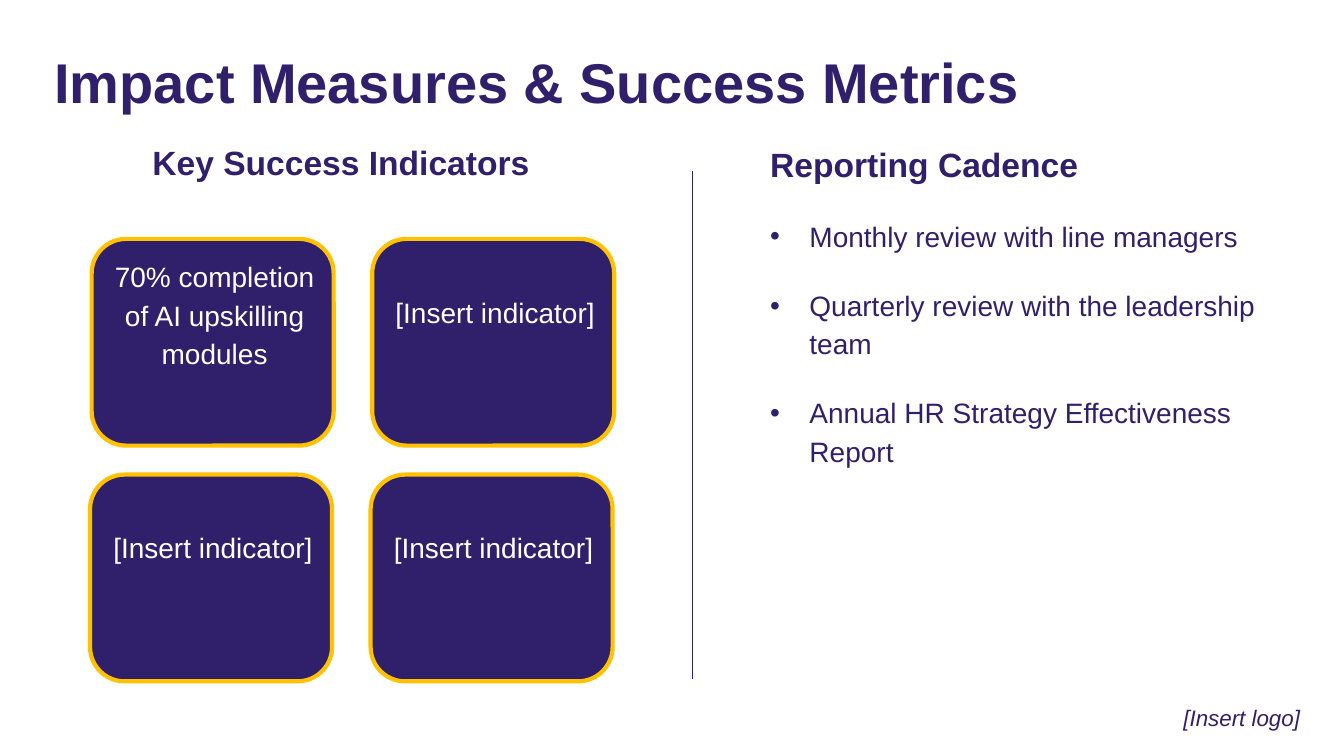
"""Build the impact measures and success metrics slide."""
from pptx import Presentation
from pptx.dml.color import RGBColor
from pptx.enum.shapes import MSO_CONNECTOR as CONN, MSO_SHAPE as SHAPE
from pptx.enum.text import MSO_ANCHOR as ANCHOR, PP_ALIGN as ALIGN
from pptx.oxml.ns import qn
from pptx.util import Cm, Pt
from lxml.etree import SubElement

TITLE = "Impact Measures & Success Metrics"
INDICATORS_HEAD = "Key Success Indicators"
INDICATORS = [
    "70% completion of AI upskilling modules",
    "[Insert indicator]",
    "[Insert indicator]",
    "[Insert indicator]",
]
CADENCE_HEAD = "Reporting Cadence"
CADENCE = [
    "Monthly review with line managers",
    "Quarterly review with the leadership team",
    "Annual HR Strategy Effectiveness Report",
]
LOGO_NOTE = "[Insert logo]"

THEME = {
    "font": "Arial",
    "navy": RGBColor.from_string("30206B"),
    "gold": RGBColor.from_string("FFC100"),
    "white": RGBColor.from_string("FFFFFF"),
    "title": 40, "head": 24, "body": 20, "note": 16,
    "card_line": 3, "rule": 0.75, "gap": 22, "spacing": 1.14,
}

CARD_W, CARD_H = 6.1, 5.21
CARD_LEFT, CARD_TOP = 2.31, 6.02
PITCH_X, PITCH_Y = 7.07, 5.94
ROW_SHIFT = -0.04
HEAD_INDENT, BULLET_INDENT, BULLET_HANG = 0.28, 1.27, 0.99


def add_text(tf, text, size="body", color="navy", bold=False, italic=False,
             align=ALIGN.LEFT, spacing=THEME["spacing"], indent=0, bullet=False):
    """Add a formatted paragraph to a text frame."""
    first = not tf.paragraphs[0].runs
    p = tf.paragraphs[0] if first else tf.add_paragraph()
    pPr = p._p.get_or_add_pPr()
    pPr.set("marL", str(Cm(indent)))
    pPr.set("indent", str(-Cm(BULLET_HANG) if bullet else 0))
    if bullet:
        SubElement(pPr, qn("a:buFont")).set("typeface", THEME["font"])
        SubElement(pPr, qn("a:buChar")).set("char", "•")
    p.alignment, p.line_spacing = align, spacing
    if not first:
        p.space_before = Pt(THEME["gap"])
    r = p.add_run()
    r.text = text
    font = r.font
    font.name, font.size = THEME["font"], Pt(THEME[size])
    font.bold, font.italic = bold, italic
    font.color.rgb = THEME[color]


def add_box(s, left, top, width, height, anchor=ANCHOR.TOP):
    """Add an empty wrapping text box without margins."""
    tf = s.shapes.add_textbox(Cm(left), Cm(top), Cm(width), Cm(height)).text_frame
    tf.word_wrap, tf.vertical_anchor = True, anchor
    tf.margin_left = tf.margin_right = tf.margin_top = tf.margin_bottom = 0
    return tf


def add_card(s, index, text):
    """Add one indicator card at its place in the two-column grid."""
    row, col = divmod(index, 2)
    left = CARD_LEFT + col * PITCH_X + row * ROW_SHIFT
    top = CARD_TOP + row * PITCH_Y
    sp = s.shapes.add_shape(SHAPE.ROUNDED_RECTANGLE, Cm(left), Cm(top),
                            Cm(CARD_W), Cm(CARD_H))
    sp.shadow.inherit = False
    sp.fill.solid()
    sp.fill.fore_color.rgb = THEME["navy"]
    sp.line.color.rgb = THEME["gold"]
    sp.line.width = Pt(THEME["card_line"])
    inset, height = (0.41, 4.34) if index == 0 else (1.3, 2.54)
    tf = add_box(s, left + 0.51, top + inset, 5.18, height)
    add_text(tf, text, color="white", align=ALIGN.CENTER)


def main():
    """Assemble and save the slide."""
    prs = Presentation()
    prs.slide_width, prs.slide_height = Cm(33.87), Cm(19.05)
    s = prs.slides.add_slide(prs.slide_layouts[6])

    tf = add_box(s, 1.37, 1.32, 31.17, 1.68, ANCHOR.MIDDLE)
    add_text(tf, TITLE, size="title", bold=True, spacing=0.9)

    rule = s.shapes.add_connector(CONN.STRAIGHT, Cm(17.45), Cm(4.32), Cm(17.45), Cm(17.12))
    rule.line.color.rgb = THEME["navy"]
    rule.line.width = Pt(THEME["rule"])
    SubElement(rule._element.spPr, qn("a:effectLst"))

    tf = add_box(s, 29.54, 17.07, 3.51, 1.37, ANCHOR.BOTTOM)
    add_text(tf, LOGO_NOTE, size="note", italic=True, align=ALIGN.CENTER, spacing=0.9)

    tf = add_box(s, 19.13, 3.48, 12.73, 7.32)
    add_text(tf, CADENCE_HEAD, size="head", bold=True, indent=HEAD_INDENT)
    for item in CADENCE:
        add_text(tf, item, indent=BULLET_INDENT, bullet=True)

    tf = add_box(s, 3.56, 3.43, 9.83, 2.51)
    add_text(tf, INDICATORS_HEAD, size="head", bold=True, indent=HEAD_INDENT)
    for index, text in enumerate(INDICATORS):
        add_card(s, index, text)

    prs.save("out.pptx")


if __name__ == "__main__":
    main()
